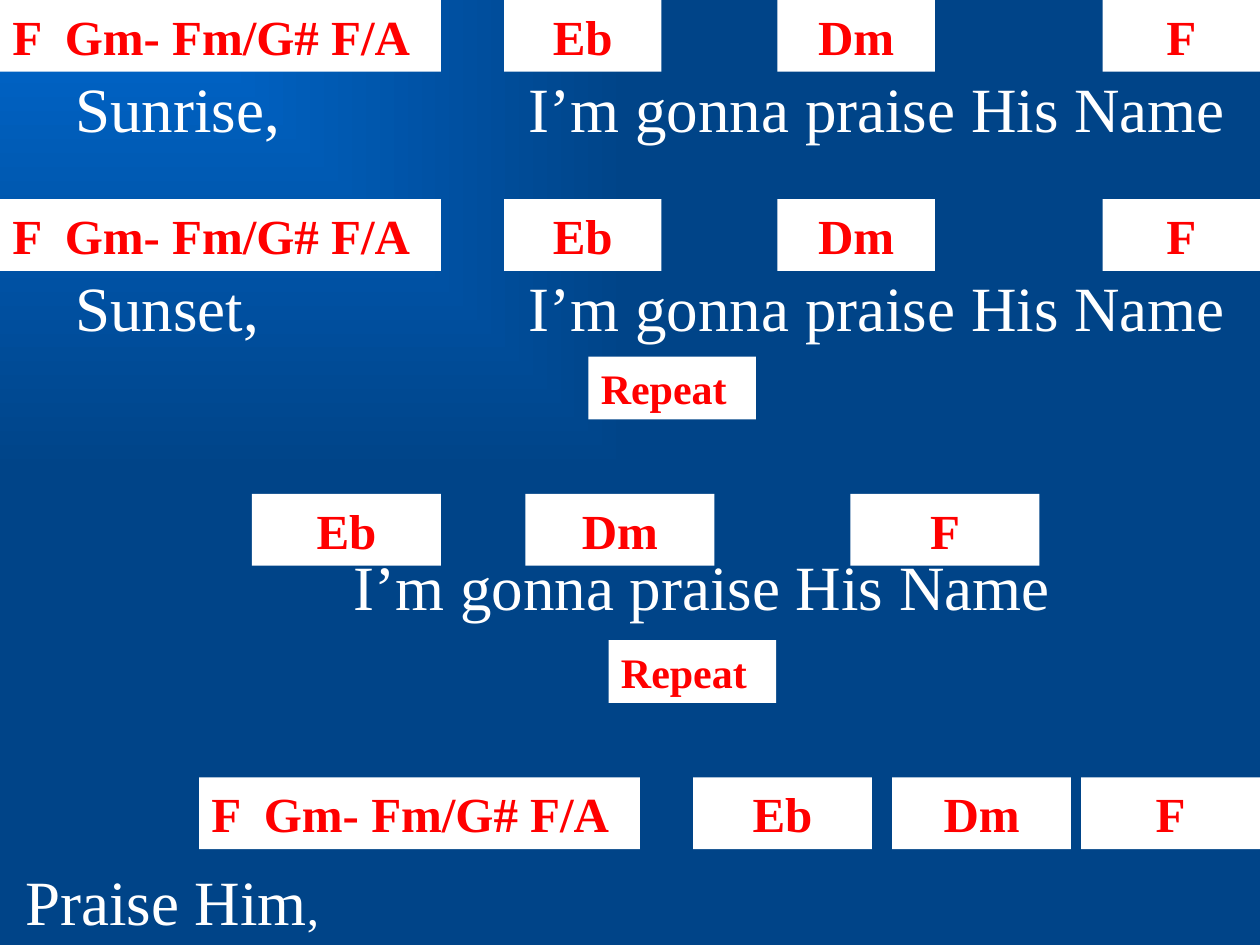
from dataclasses import dataclass

from lxml import etree
from pptx import Presentation
from pptx.dml.color import RGBColor
from pptx.enum.shapes import MSO_SHAPE
from pptx.enum.text import MSO_ANCHOR, MSO_AUTO_SIZE, PP_ALIGN
from pptx.oxml.ns import qn
from pptx.util import Inches, Pt

RECTANGLE = MSO_SHAPE.RECTANGLE
TOP = MSO_ANCHOR.TOP
FIT_SHAPE = MSO_AUTO_SIZE.SHAPE_TO_FIT_TEXT
LEFT, CENTER = PP_ALIGN.LEFT, PP_ALIGN.CENTER


@dataclass(frozen=True)
class Theme:
    font: str = "Times New Roman"
    glow: RGBColor = RGBColor(0x00, 0x66, 0xCC)
    ground: RGBColor = RGBColor(0x00, 0x44, 0x88)
    lyric: RGBColor = RGBColor(0xFF, 0xFF, 0xFF)
    card: RGBColor = RGBColor(0xFF, 0xFF, 0xFF)
    chord: RGBColor = RGBColor(0xFF, 0x00, 0x00)
    lyric_size: int = 36
    chord_size: int = 28
    repeat_size: int = 24


THEME = Theme()
LYRIC_HEIGHT = 0.7
CHORD_HEIGHT = 0.57
INTRO = "F  Gm- Fm/G# F/A"
INTRO_WIDTH = 3.5
CHORDS = ("Eb", "Dm", "F")
PRAISE = "I’m gonna praise His Name"


def write_text(shape, *runs, color, bold=False, align=CENTER):
    frame = shape.text_frame
    frame.word_wrap = True
    frame.auto_size = FIT_SHAPE
    frame.vertical_anchor = TOP
    paragraph = frame.paragraphs[0]
    paragraph.alignment = align
    for text, size in runs:
        run = paragraph.add_run()
        run.text = text
        run.font.name = THEME.font
        run.font.size = Pt(size)
        run.font.bold = bold
        run.font.color.rgb = color


def paint_background(slide):
    fill = slide.background.fill
    fill.gradient()
    for stop, color in zip(fill.gradient_stops, (THEME.glow, THEME.ground)):
        stop.color.rgb = color
    gradient = slide.background._cSld.find(".//" + qn("a:gradFill"))
    linear = gradient.find(qn("a:lin"))
    corner = etree.Element(qn("a:path"), {"path": "rect"})
    etree.SubElement(corner, qn("a:fillToRect"), {"r": "100000", "b": "100000"})
    gradient.replace(linear, corner)


def add_card(slide, left, top, width, text, height=CHORD_HEIGHT,
             size=THEME.chord_size, align=CENTER):
    card = slide.shapes.add_shape(
        RECTANGLE, Inches(left), Inches(top), Inches(width), Inches(height))
    card.shadow.inherit = False
    card.fill.solid()
    card.fill.fore_color.rgb = THEME.card
    card.line.fill.background()
    write_text(card, (text, size), color=THEME.chord, bold=True, align=align)


def add_lyric(slide, left, top, width, *runs, align=CENTER):
    box = slide.shapes.add_textbox(
        Inches(left), Inches(top), Inches(width), Inches(LYRIC_HEIGHT))
    write_text(box, *runs, color=THEME.lyric, align=align)


def add_chord_row(slide, top, lefts, width, intro_left=None):
    if intro_left is not None:
        add_card(slide, intro_left, top, INTRO_WIDTH, INTRO, align=LEFT)
    for left, chord in zip(lefts, CHORDS):
        add_card(slide, left, top, width, chord)


def add_repeat(slide, left, top):
    add_card(slide, left, top, 1.33, "Repeat", height=0.5,
             size=THEME.repeat_size, align=LEFT)


def add_verse(slide, top, opening):
    lyric_top = top + 0.5
    add_lyric(slide, 0.5, lyric_top, 2.83, (opening, THEME.lyric_size), align=LEFT)
    add_chord_row(slide, top, (4, 6.17, 8.75), 1.25, intro_left=0)
    add_lyric(slide, 3.92, lyric_top, 6.08, (PRAISE, THEME.lyric_size))


def add_refrain(slide, top):
    add_chord_row(slide, top, (2, 4.17, 6.75), 1.5)
    add_lyric(slide, 1.92, top + 0.38, 7.3, (PRAISE, THEME.lyric_size))


def add_ending(slide, top):
    add_chord_row(slide, top, (5.5, 7.08, 8.58), 1.42, intro_left=1.58)
    add_lyric(slide, 0, top + 0.63, 2.83,
              ("Praise Him", THEME.lyric_size), (", ", THEME.chord_size))


def main():
    presentation = Presentation()
    presentation.slide_width = Inches(10)
    presentation.slide_height = Inches(7.5)
    slide = presentation.slides.add_slide(presentation.slide_layouts[6])
    paint_background(slide)
    for top, opening in ((0, "Sunrise,"), (1.58, "Sunset,")):
        add_verse(slide, top, opening)
    add_repeat(slide, 4.67, 2.83)
    add_refrain(slide, 3.92)
    add_repeat(slide, 4.83, 5.08)
    add_ending(slide, 6.17)
    presentation.save("out.pptx")


if __name__ == "__main__":
    main()
